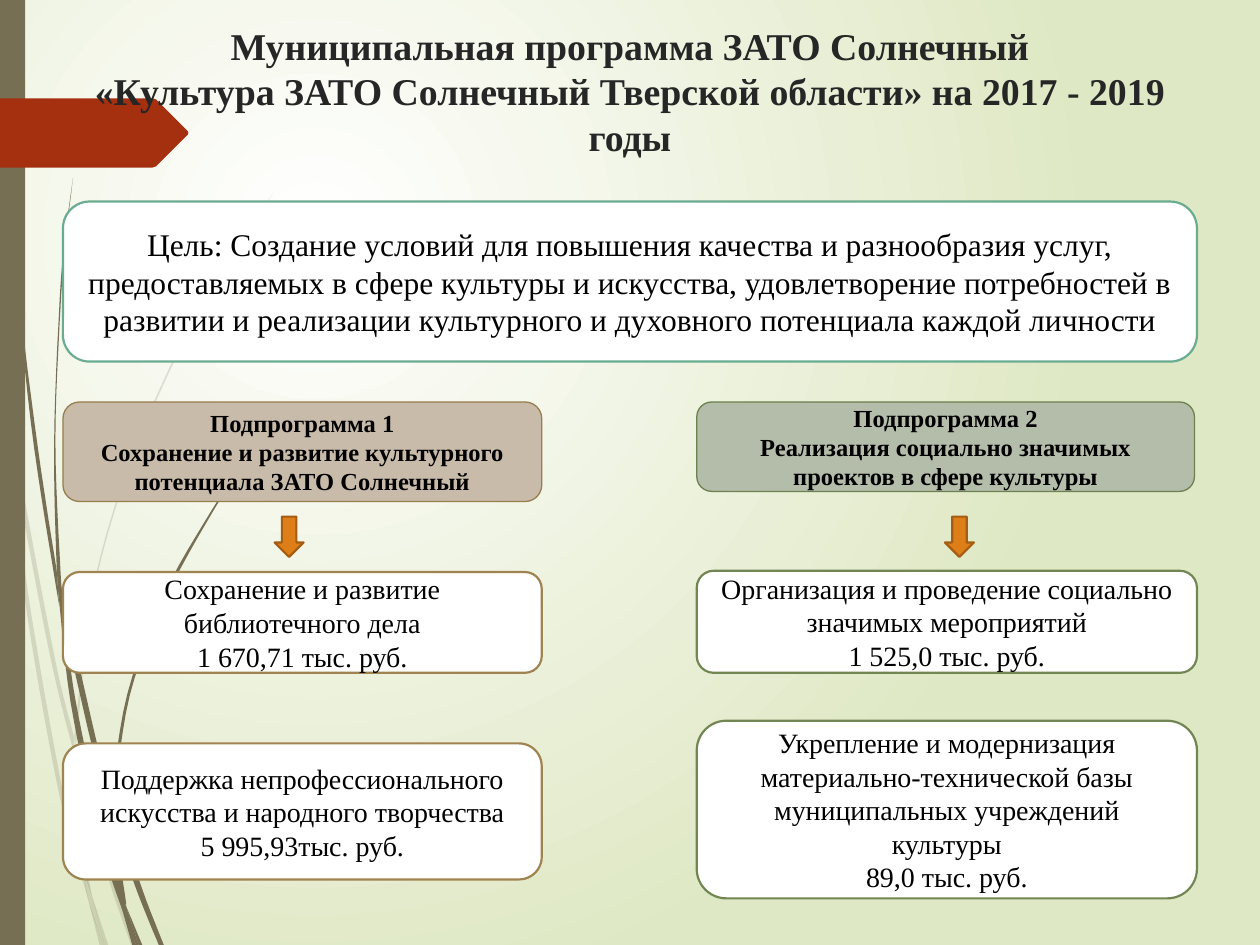
from lxml import etree
from pptx import Presentation
from pptx import util as u
from pptx.dml.color import RGBColor
from pptx.enum import shapes, text
from pptx.oxml.ns import qn

CELL = 0.5  # the slide is a grid of 20 columns and 15 rows
FONT = "Times New Roman"
OLIVE, RED, ORANGE = "766F54", "A53010", "DE7E18"
KIND = shapes.MSO_SHAPE

# Grass blades: one edge down, the other edge back, in hundredths of an inch
FAINT_BLADES = [
    ([(0, 282), (6, 322), (8, 350)], [(7, 344), (0, 299)]),
    ([(10, 345), (43, 520), (59, 586)], [(59, 599), (40, 522), (12, 376)]),
    ([(61, 596), (64, 607), (88, 692), (108, 750)], [(104, 750), (85, 694), (61, 610)]),
    ([(73, 711), (86, 750)], [(83, 750), (73, 711)]),
    ([(8, 350), (12, 376), (22, 469), (48, 619), (64, 683), (70, 714)],
     [(64, 693), (45, 621), (19, 470), (8, 350)]),
    ([(58, 599), (60, 646), (64, 683), (73, 711)], [(72, 706), (63, 646), (61, 610)]),
    ([(217, 153), (186, 197), (158, 244), (110, 348), (75, 461), (59, 584)],
     [(61, 596), (61, 584), (76, 462), (111, 349), (159, 245), (187, 198), (217, 153)]),
    ([(70, 714), (79, 750)], [(82, 750), (70, 714)]),
    ([(65, 683), (73, 711), (83, 750)], [(82, 750), (70, 714), (65, 683)]),
]
DARK_BLADES = [
    ([(2, 0), (3, 48), (5, 110), (14, 233), (27, 355), (47, 481)],
     [(45, 453), (30, 355), (15, 232), (6, 109), (4, 48), (3, 0)]),
    ([(50, 472), (77, 590), (88, 631)], [(88, 645), (73, 592), (53, 505)]),
    ([(91, 641), (94, 649), (113, 706), (130, 750)], [(126, 750), (109, 708), (91, 656)]),
    ([(47, 477), (53, 505), (60, 556), (81, 657), (91, 691), (97, 722)],
     [(92, 708), (77, 659), (56, 557), (47, 477)]),
    ([(58, 141), (51, 193), (47, 245), (43, 349), (45, 449), (49, 472)],
     [(50, 472), (48, 453), (44, 349), (48, 245), (52, 193), (58, 141)]),
    ([(100, 719), (113, 750)], [(110, 750), (100, 719)]),
    ([(45, 449), (47, 477), (53, 505)], [(50, 472), (45, 449)]),
    ([(216, 344), (191, 373), (168, 405), (129, 474), (101, 551), (88, 631)],
     [(91, 641), (91, 633), (103, 552), (131, 476), (169, 406), (191, 374), (216, 344)]),
    ([(97, 722), (108, 750)], [(105, 750), (97, 722)]),
    ([(88, 645), (91, 691), (100, 719)], [(100, 716), (91, 656), (88, 645)]),
    ([(91, 691), (100, 719), (110, 750)], [(108, 750), (97, 722), (91, 691)]),
]


def rgb(h):
    return RGBColor.from_string(h)


def emu(box):
    return [u.Inches(v * CELL) for v in box]


def paint(sp, fill, line=None, width=1.25):
    sp.shadow.inherit = False
    sp.fill.solid()
    sp.fill.fore_color.rgb = rgb(fill)
    if line:
        sp.line.color.rgb = rgb(line)
        sp.line.width = u.Pt(width)
    else:
        sp.line.fill.background()


def write(sp, paras, size, color="000000", bold=False):
    tf = sp.text_frame
    tf.word_wrap = True
    tf.vertical_anchor = text.MSO_ANCHOR.MIDDLE
    for i, para in enumerate(paras):
        p = tf.add_paragraph() if i else tf.paragraphs[0]
        p.alignment = text.PP_ALIGN.CENTER
        for j, part in enumerate(para.split("\n")):
            if j:
                p.add_line_break()
            r = p.add_run()
            r.text = part
            r.font.name, r.font.size, r.font.bold = FONT, u.Pt(size), bold
            r.font.color.rgb = rgb(color)


def card(s, kind, box, paras, size, fill, line, width=1.25, bold=False):
    sp = s.shapes.add_shape(kind, *emu(box))
    paint(sp, fill, line, width)
    write(sp, paras, size, bold=bold)


def smooth(pts, steps=6):
    """Catmull-Rom curve through the points."""
    ext = [pts[0], *pts, pts[-1]]
    out = [pts[0]]
    for a, b, c, d in zip(ext, ext[1:], ext[2:], ext[3:]):
        for k in range(1, steps + 1):
            t = k / steps
            out.append(tuple(
                (2 * q + (r - p) * t + (2 * p - 5 * q + 4 * r - v) * t ** 2
                 + (3 * q - p - 3 * r + v) * t ** 3) / 2
                for p, q, r, v in zip(a, b, c, d)))
    return out


def outline(s, pts, fill, alpha=None):
    pts = [(x * 10, y * 10) for x, y in pts]
    fb = s.shapes.build_freeform(*pts[0], scale=u.Inches(1) / 1000)
    fb.add_line_segments(pts[1:], close=True)
    sp = fb.convert_to_shape()
    paint(sp, fill)
    if alpha:
        clr = sp.fill._xPr.find(".//" + qn("a:srgbClr"))
        etree.SubElement(clr, qn("a:alpha"), val=str(alpha * 1000))


def background(s):
    fill = s.background.fill
    fill.gradient()
    for stop, color in zip(fill.gradient_stops, ("FFFFFF", "DFE8C4")):
        stop.color.rgb = rgb(color)
    grad = s.background._cSld.find(".//" + qn("a:gradFill"))
    grad.remove(grad.find(qn("a:lin")))
    circle = etree.SubElement(grad, qn("a:path"), path="circle")
    etree.SubElement(circle, qn("a:fillToRect"), l="50000", t="50000", r="100000", b="100000")


def decoration(s):
    for blades, alpha in ((FAINT_BLADES, 20), (DARK_BLADES, None)):
        for down, back in blades:
            outline(s, smooth(down) + smooth(back), OLIVE, alpha)
    # Side bar and red pointer
    paint(s.shapes.add_shape(KIND.RECTANGLE, *emu((0, 0, 0.4, 15))), OLIVE)
    outline(s, [(0, 78), (121, 78), (124, 79), (149, 104), (149.5, 105.5),
                (149, 107), (124, 132), (121, 133), (0, 133)], RED)


def title(s, box, words):
    write(s.shapes.add_textbox(*emu(box)), [words], 21.6, "262626", True)


def branch(s, box, head, tasks, arrow, fill, head_line, task_line):
    """Subprogramme heading, an arrow and its tasks, inside one column."""
    x, y, w, _ = box
    head_w, head_h, paras = head
    card(s, KIND.FLOWCHART_ALTERNATE_PROCESS, (x, y, head_w, head_h), paras, 14,
         fill, head_line, 0.75, True)
    for dy, h, paras in tasks:
        card(s, KIND.ROUNDED_RECTANGLE, (x, y + dy, w, h), paras, 16, "FFFFFF", task_line)
    sp = s.shapes.add_shape(KIND.DOWN_ARROW, *emu((x + arrow, y + 1.82, 0.46, 0.64)))
    paint(sp, ORANGE, "A45D12")


def main():
    prs = Presentation()
    prs.slide_width, prs.slide_height = u.Inches(20 * CELL), u.Inches(15 * CELL)
    s = prs.slides.add_slide(prs.slide_layouts[6])
    background(s)
    decoration(s)
    title(s, (1, 0.26, 18, 2.36),
          "Муниципальная программа ЗАТО Солнечный\n"
          "«Культура ЗАТО Солнечный Тверской области» на 2017 - 2019 годы")

    # Goal
    card(s, KIND.FLOWCHART_ALTERNATE_PROCESS, (1, 3.2, 18, 2.54),
         ["Цель: Создание условий для повышения качества и разнообразия услуг, "
          "предоставляемых в сфере культуры и искусства, удовлетворение потребностей в "
          "развитии и реализации культурного и духовного потенциала каждой личности"],
         18, "FFFFFF", "6AAC91")

    # Subprogrammes
    branch(s, (1, 6.38, 7.6, 7.6),
           (7.6, 1.58, ["Подпрограмма 1",
                        "Сохранение и развитие культурного потенциала ЗАТО Солнечный"]),
           [(2.7, 1.6, ["Сохранение и развитие библиотечного дела", "1 670,71 тыс. руб."]),
            (5.42, 2.16, ["Поддержка непрофессионального искусства и народного творчества",
                          "5 995,93тыс. руб."])],
           3.36, "C8BBAA", "987D4D", "9F8351")
    branch(s, (11.06, 6.38, 7.94, 7.9),
           (7.9, 1.42, ["Подпрограмма 2",
                        "Реализация социально значимых проектов в сфере культуры"]),
           [(2.68, 1.62, ["Организация и проведение социально значимых мероприятий",
                          "1 525,0 тыс. руб."]),
            (5.06, 2.82, ["Укрепление и модернизация материально-технической базы "
                          "муниципальных учреждений культуры", "89,0 тыс. руб."])],
           3.94, "B4BCAA", "6D804F", "728653")
    prs.save("out.pptx")


if __name__ == "__main__":
    main()
